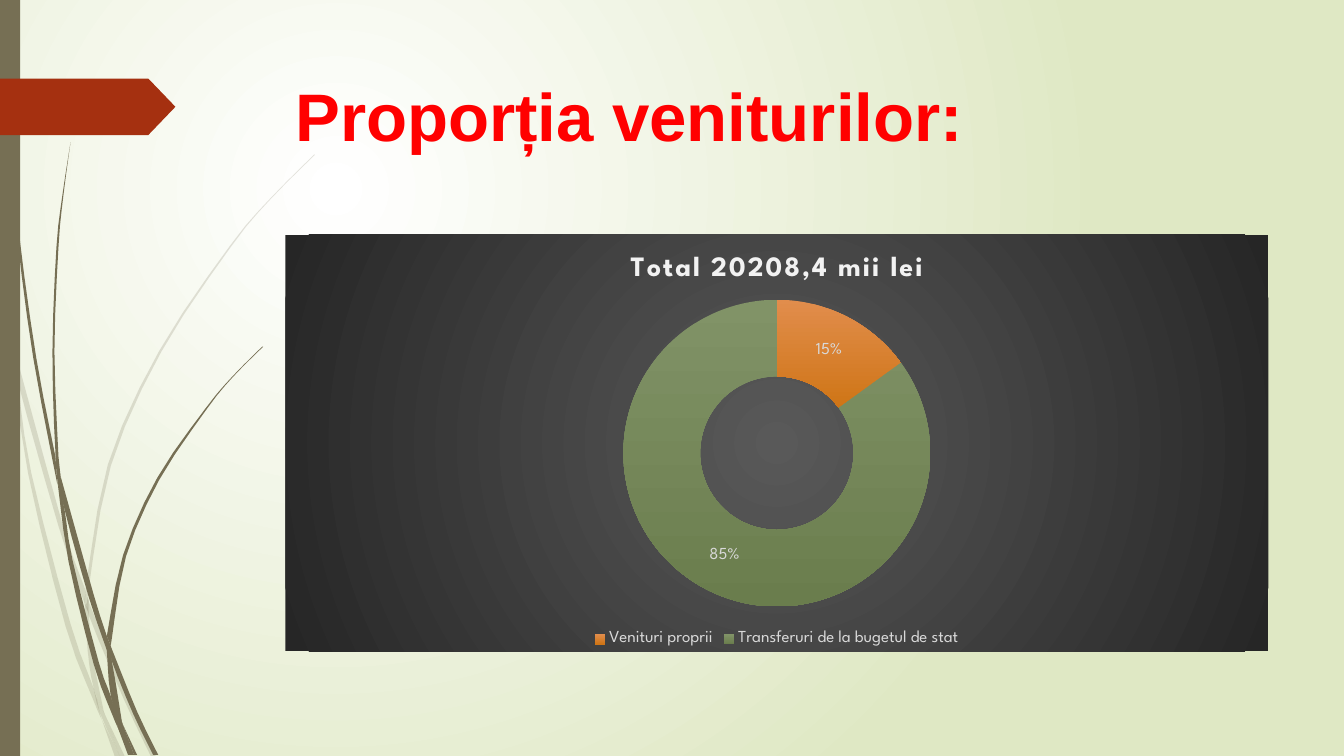
from lxml import etree
from pptx import Presentation
from pptx.chart.data import CategoryChartData
from pptx.dml.color import RGBColor
from pptx.enum.chart import XL_CHART_TYPE as CT, XL_LEGEND_POSITION as LP
from pptx.enum.shapes import MSO_SHAPE as SHP
from pptx.enum.text import MSO_ANCHOR
from pptx.oxml import parse_xml
from pptx.oxml.ns import nsdecls, qn
from pptx.util import Inches, Pt

W, H = 13.33, 7.5
OLIVE = RGBColor(0x76, 0x6F, 0x54)
RUST = RGBColor(0xA5, 0x30, 0x10)
RED = RGBColor(0xFF, 0x00, 0x00)
WHITE = RGBColor(0xFF, 0xFF, 0xFF)
PALE_GREEN = RGBColor(0xDF, 0xE8, 0xC4)
PANEL = RGBColor(0x59, 0x59, 0x59), RGBColor(0x26, 0x26, 0x26)
ORANGE = RGBColor(0xE1, 0x8D, 0x4C), RGBColor(0xCF, 0x75, 0x16)
GREEN = RGBColor(0x81, 0x93, 0x67), RGBColor(0x6A, 0x7D, 0x4D)
NEAR_WHITE = RGBColor(0xF2, 0xF2, 0xF2)
LIGHT_GREY = RGBColor(0xD9, 0xD9, 0xD9)
HEAD_FONT, CHART_FONT = "Arial", "League Spartan"

# Grass pieces: one edge from the tip down, then the other edge back up
FAINT_GRASS = [
    ([(0, 2.82), (0.09, 3.22), (0.11, 3.5)], [(0.1, 3.44), (0, 2.99)]),
    ([(0.14, 3.45), (0.17, 3.76), (0.58, 5.22), (0.84, 5.99)],
     [(0.85, 5.86), (0.62, 5.2), (0.14, 3.45)]),
    ([(0.88, 5.96), (0.88, 6.1), (1.23, 6.94), (1.5, 7.51)],
     [(1.55, 7.51), (1.27, 6.92), (0.92, 6.07), (0.88, 5.96)]),
    ([(1.05, 7.11), (1.19, 7.51)], [(1.24, 7.51), (1.05, 7.11)]),
    ([(0.11, 3.5), (0.28, 4.7), (0.65, 6.21), (0.92, 6.93), (1.01, 7.14)],
     [(0.99, 7.07), (0.93, 6.83), (0.7, 6.19), (0.31, 4.69), (0.17, 3.76), (0.11, 3.5)]),
    ([(0.84, 5.99), (0.87, 6.46), (0.93, 6.83), (1.05, 7.11)],
     [(1.03, 7.06), (0.91, 6.46), (0.88, 6.08), (0.84, 5.99)]),
    ([(3.12, 1.53), (2.68, 1.97), (2.28, 2.44), (1.58, 3.48), (1.07, 4.61), (0.85, 5.84)],
     [(0.88, 5.96), (0.88, 5.84), (1.1, 4.62), (1.6, 3.49), (2.29, 2.45),
      (2.68, 1.98), (3.12, 1.54)]),
    ([(1.01, 7.14), (1.14, 7.51)], [(1.19, 7.51), (1.01, 7.14)]),
    ([(0.85, 5.86), (0.84, 5.99), (0.88, 6.08)], [(0.88, 5.96), (0.85, 5.86)]),
    ([(0.93, 6.83), (0.99, 7.07), (1.19, 7.51)], [(1.05, 7.11), (0.96, 6.92), (0.93, 6.83)]),
]
DARK_GRASS = [
    ([(0.03, 0), (0.07, 1.1), (0.17, 2.33), (0.33, 3.55), (0.57, 4.81)],
     [(0.55, 4.53), (0.36, 3.55), (0.19, 2.32), (0.08, 1.09), (0.04, 0)]),
    ([(0.6, 4.72), (0.64, 5.05), (0.88, 5.92), (1.06, 6.45)],
     [(1.06, 6.31), (0.93, 5.9), (0.6, 4.72)]),
    ([(1.1, 6.41), (1.11, 6.56), (1.32, 7.08), (1.52, 7.49)],
     [(1.57, 7.49), (1.36, 7.06), (1.13, 6.49), (1.1, 6.41)]),
    ([(0.57, 4.77), (0.68, 5.57), (0.93, 6.59), (1.11, 7.08), (1.17, 7.22)],
     [(1.16, 7.17), (1.1, 6.91), (0.98, 6.57), (0.72, 5.56), (0.64, 5.05), (0.57, 4.77)]),
    ([(0.7, 1.41), (0.62, 1.93), (0.56, 2.45), (0.52, 3.49), (0.55, 4.49), (0.6, 4.72)],
     [(0.58, 4.53), (0.54, 3.49), (0.58, 2.45), (0.63, 1.93), (0.7, 1.41)]),
    ([(1.22, 7.19), (1.33, 7.49)], [(1.36, 7.49), (1.22, 7.19)]),
    ([(0.55, 4.49), (0.57, 4.77), (0.64, 5.05)], [(0.6, 4.72), (0.55, 4.49)]),
    ([(2.6, 3.44), (2.31, 3.73), (2.04, 4.05), (1.56, 4.74), (1.22, 5.51), (1.06, 6.31)],
     [(1.1, 6.41), (1.11, 6.33), (1.25, 5.52), (1.58, 4.76), (2.05, 4.06),
      (2.31, 3.74), (2.61, 3.44)]),
    ([(1.17, 7.22), (1.27, 7.49)], [(1.31, 7.49), (1.17, 7.22)]),
    ([(1.06, 6.45), (1.1, 6.91), (1.22, 7.19)], [(1.21, 7.16), (1.11, 6.56), (1.06, 6.45)]),
    ([(1.06, 6.31), (1.06, 6.45), (1.11, 6.56)], [(1.1, 6.41), (1.06, 6.31)]),
    ([(1.1, 6.91), (1.17, 7.22), (1.3, 7.49)],
     [(1.33, 7.49), (1.22, 7.19), (1.16, 7.06), (1.1, 6.91)]),
]


def grad_xml(colors, focus=None):
    """Gradient fill: circular around focus (l, t, r, b), else top to bottom."""
    stops = "".join(f'<a:gs pos="{pos}"><a:srgbClr val="{c}"/></a:gs>'
                    for pos, c in zip((0, 100000), colors))
    run = '<a:lin ang="5400000" scaled="0"/>'
    if focus:
        sides = " ".join(f'{k}="{v * 1000}"' for k, v in zip("ltrb", focus))
        run = f'<a:path path="circle"><a:fillToRect {sides}/></a:path>'
    return parse_xml(f'<a:gradFill {nsdecls("a")} rotWithShape="1">'
                     f'<a:gsLst>{stops}</a:gsLst>{run}</a:gradFill>')


def style_font(font, size, color, name, bold=False):
    font.size, font.name, font.bold = Pt(size), name, bold
    font.color.rgb = color


def add_text(tf, text, **fmt):
    r = tf.paragraphs[0].add_run()
    r.text = text
    style_font(r.font, **fmt)
    return r


def paint(sp, color, alpha=100):
    sp.shadow.inherit = False
    sp.line.fill.background()
    sp.fill.solid()
    sp.fill.fore_color.rgb = color
    if alpha < 100:
        clr = sp.fill._xPr.find(qn("a:solidFill"))[0]
        etree.SubElement(clr, qn("a:alpha")).set("val", str(alpha * 1000))


def smooth(pts, steps=3):
    """Points of a Catmull-Rom curve through pts."""
    if len(pts) == 2:
        return pts
    ends = [pts[0], *pts, pts[-1]]
    curve = [pts[0]]
    for a, b, c, d in zip(ends, ends[1:], ends[2:], ends[3:]):
        for t in (i / steps for i in range(1, steps + 1)):
            curve.append(tuple(
                (2 * q + (r - p) * t + (2 * p - 5 * q + 4 * r - s) * t ** 2
                 + (3 * q - p - 3 * r + s) * t ** 3) / 2
                for p, q, r, s in zip(a, b, c, d)))
    return curve


def add_background(s):
    s.background.fill.solid()
    bg_pr = s.background._cSld.bg.bgPr
    bg_pr.replace(bg_pr[0], grad_xml((WHITE, PALE_GREEN), (50, 50, 100, 100)))


def add_grass(s, pieces, alpha):
    for down, up in pieces:
        first, *rest = [(Inches(x), Inches(y)) for x, y in smooth(down) + smooth(up)]
        fb = s.shapes.build_freeform(*first)
        fb.add_line_segments(rest, close=True)
        paint(fb.convert_to_shape(), OLIVE, alpha)


def add_side_band(s, x, y, w, h):
    band = s.shapes.add_shape(SHP.RECTANGLE, *map(Inches, (x, y, w, h)))
    paint(band, OLIVE)


def add_tag(s, x, y, w, h):
    tag = s.shapes.add_shape(SHP.PENTAGON, *map(Inches, (x, y, w, h)))
    tag.adjustments[0] = 0.48
    paint(tag, RUST)


def add_title(s, x, y, w, h):
    tf = s.shapes.add_textbox(*map(Inches, (x, y, w, h))).text_frame
    tf.word_wrap = True
    tf.vertical_anchor = MSO_ANCHOR.TOP
    add_text(tf, "Proporția veniturilor:", size=48, color=RED, name=HEAD_FONT, bold=True)


def add_income_chart(s, x, y, w, h):
    data = CategoryChartData()
    data.categories = ["Venituri proprii", "Transferuri de la bugetul de stat"]
    data.add_series("Series 1", (15, 85))
    chart = s.shapes.add_chart(CT.DOUGHNUT, *map(Inches, (x, y, w, h)), data).chart
    style_font(chart.font, 12, LIGHT_GREY, CHART_FONT)

    # Dark panel behind the ring
    panel = parse_xml(f'<c:spPr {nsdecls("c", "a")}><a:ln><a:noFill/></a:ln></c:spPr>')
    panel.insert(0, grad_xml(PANEL, (50, 50, 50, 50)))
    chart._chartSpace.chart.addnext(panel)

    # Heading and legend
    chart.has_title = True
    r = add_text(chart.chart_title.text_frame, "Total 20208,4 mii lei",
                 size=20, color=NEAR_WHITE, name=CHART_FONT, bold=True)
    r.font._element.set("spc", "130")
    chart.chart_title.include_in_layout = False
    chart.has_legend = True
    chart.legend.position = LP.BOTTOM
    chart.legend.include_in_layout = False

    # Ring placed by shares of the panel
    area = chart._chartSpace.chart.plotArea
    for old in area.findall(qn("c:layout")):
        area.remove(old)
    box = "".join(f'<c:{k} val="{v}"/>' for k, v in (
        ("layoutTarget", "inner"), ("xMode", "edge"), ("yMode", "edge"),
        ("x", 0.34), ("y", 0.156), ("w", 0.32), ("h", 0.737)))
    area.insert(0, parse_xml(f'<c:layout {nsdecls("c")}><c:manualLayout>{box}'
                             '</c:manualLayout></c:layout>'))
    plot = chart.plots[0]
    plot.vary_by_categories = True
    plot._element.find(qn("c:holeSize")).set("val", "75")
    for i, colors in enumerate((ORANGE, GREEN)):
        fmt = plot.series[0].points[i].format
        fmt.line.fill.background()
        fmt.fill._xPr.insert(0, grad_xml(colors))
    plot.has_data_labels = True
    labels = plot.data_labels
    labels.show_percentage, labels.show_value = True, False
    labels.number_format, labels.number_format_is_linked = "0%", False
    for font in (labels.font, chart.legend.font):
        style_font(font, 12, LIGHT_GREY, CHART_FONT)


prs = Presentation()
prs.slide_width, prs.slide_height = Inches(W), Inches(H)
s = prs.slides.add_slide(prs.slide_layouts[6])
add_background(s)
add_grass(s, FAINT_GRASS, 20)
add_grass(s, DARK_GRASS, 100)
add_side_band(s, 0, 0, 0.2, H)
add_tag(s, 0, 0.78, 1.74, 0.56)
add_title(s, 2.83, 0.69, 9.75, 1.4)
add_income_chart(s, 2.83, 2.33, 9.75, 4.13)
prs.save("out.pptx")
